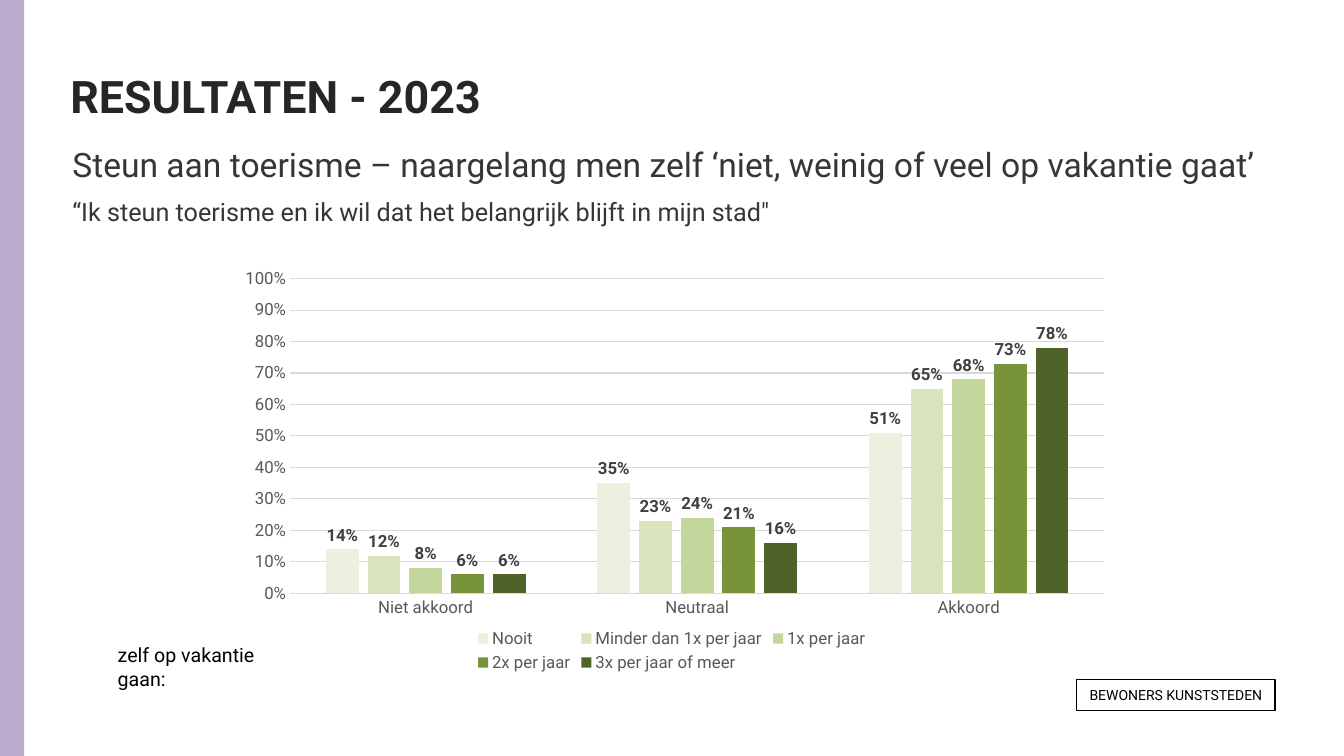
import pptx
import pptx.util
import pptx.chart.data
import pptx.dml.color
import pptx.enum.chart
import pptx.enum.shapes
import pptx.enum.text
import pptx.oxml
import pptx.oxml.ns

Pt = pptx.util.Pt
RGBColor = pptx.dml.color.RGBColor
ANCHOR = pptx.enum.text.MSO_ANCHOR

# Content
TITLE = "RESULTATEN - 2023"
SUBTITLE = [
    ("Steun aan toerisme – naargelang men zelf ‘niet, weinig of veel op vakantie gaat’", 24),
    ("“Ik steun toerisme en ik wil dat het belangrijk blijft in mijn stad\"", 18),
]
LEGEND_CAPTION = "zelf op vakantie gaan:"
BADGE = "BEWONERS KUNSTSTEDEN"
ANSWERS = ["Niet akkoord", "Neutraal", "Akkoord"]
HOLIDAY_GROUPS = [
    ("Nooit", (0.14, 0.35, 0.51), RGBColor(0xEB, 0xF1, 0xDE)),
    ("Minder dan 1x per jaar", (0.12, 0.23, 0.65), RGBColor(0xD7, 0xE4, 0xBD)),
    ("1x per jaar", (0.08, 0.24, 0.68), RGBColor(0xC3, 0xD6, 0x9B)),
    ("2x per jaar", (0.06, 0.21, 0.73), RGBColor(0x77, 0x93, 0x3C)),
    ("3x per jaar of meer", (0.06, 0.16, 0.78), RGBColor(0x4F, 0x62, 0x28)),
]
PLOT_AREA = {"x": 0.074, "y": 0.099, "w": 0.909, "h": 0.713}

# Style
FONT = "Roboto"
PERCENT = "###0%"
BLACK = RGBColor(0, 0, 0)
TITLE_INK = RGBColor(0x26, 0x26, 0x26)
SUBTITLE_INK = RGBColor(0x37, 0x36, 0x36)
LABEL_INK = RGBColor(0x40, 0x40, 0x40)
AXIS_INK = RGBColor(0x59, 0x59, 0x59)
GRID = RGBColor(0xD9, 0xD9, 0xD9)
LILAC = RGBColor(0xBC, 0xAD, 0xCE)
WHITE = RGBColor(0xFF, 0xFF, 0xFF)


def style_font(font, size, color, bold=False):
    font.name, font.size, font.bold = FONT, Pt(size), bold
    font.color.rgb = color


def add_text(slide, box, lines, color, bold=False, anchor=ANCHOR.TOP):
    frame = slide.shapes.add_textbox(*map(Pt, box)).text_frame
    frame.word_wrap = True
    frame.vertical_anchor = anchor
    frame.text = "\n".join(text for text, size in lines)
    for paragraph, (text, size) in zip(frame.paragraphs, lines):
        style_font(paragraph.runs[0].font, size, color, bold)
    return frame


def add_rectangle(slide, box):
    rectangle = slide.shapes.add_shape(
        pptx.enum.shapes.MSO_SHAPE.RECTANGLE, *map(Pt, box))
    rectangle.shadow.inherit = False
    return rectangle


def add_support_chart(slide, box):
    data = pptx.chart.data.CategoryChartData(number_format=PERCENT)
    data.categories = ANSWERS
    for name, shares, color in HOLIDAY_GROUPS:
        data.add_series(name, shares)
    chart = slide.shapes.add_chart(
        pptx.enum.chart.XL_CHART_TYPE.COLUMN_CLUSTERED, *map(Pt, box), data).chart
    chart.has_title = False
    style_font(chart.font, 10, BLACK)

    # Columns and their labels
    columns = chart.plots[0]
    columns.vary_by_categories = False
    columns.gap_width, columns.overlap = 219, -27
    for series, (name, shares, color) in zip(columns.series, HOLIDAY_GROUPS):
        series.format.fill.solid()
        series.format.fill.fore_color.rgb = color
        labels = series.data_labels
        labels.show_value = True
        labels.position = pptx.enum.chart.XL_LABEL_POSITION.OUTSIDE_END
        labels.number_format, labels.number_format_is_linked = PERCENT, False
        style_font(labels.font, 12, LABEL_INK, True)

    # Axes
    answers, shares = chart.category_axis, chart.value_axis
    for axis in (answers, shares):
        axis.major_tick_mark = axis.minor_tick_mark = pptx.enum.chart.XL_TICK_MARK.NONE
        style_font(axis.tick_labels.font, 12, AXIS_INK)
    shares.minimum_scale, shares.maximum_scale, shares.major_unit = 0, 1, 0.1
    shares.tick_labels.number_format = PERCENT
    shares.tick_labels.number_format_is_linked = False
    shares.has_major_gridlines = True
    shares.format.line.fill.background()
    for line in (answers.format.line, shares.major_gridlines.format.line):
        line.color.rgb, line.width = GRID, Pt(0.75)

    # Legend
    chart.has_legend = True
    chart.legend.position = pptx.enum.chart.XL_LEGEND_POSITION.BOTTOM
    chart.legend.include_in_layout = False
    style_font(chart.legend.font, 12, AXIS_INK)

    # Fixed plot area
    settings = [("layoutTarget", "inner"), ("xMode", "edge"), ("yMode", "edge")]
    settings += PLOT_AREA.items()
    children = "".join(f'<c:{tag} val="{value}"/>' for tag, value in settings)
    layout = pptx.oxml.parse_xml(
        f'<c:layout {pptx.oxml.ns.nsdecls("c")}>'
        f'<c:manualLayout>{children}</c:manualLayout></c:layout>')
    plot_area = chart.plots[0]._element.getparent()
    for old_layout in plot_area.findall(pptx.oxml.ns.qn("c:layout")):
        plot_area.remove(old_layout)
    plot_area.insert(0, layout)


def main():
    deck = pptx.Presentation()
    deck.slide_width, deck.slide_height = Pt(960), Pt(540)
    slide = deck.slides.add_slide(deck.slide_layouts[6])
    slide.background.fill.solid()
    slide.background.fill.fore_color.rgb = WHITE

    # Side band
    band = add_rectangle(slide, (0, 0, 17.3, 540))
    band.fill.solid()
    band.fill.fore_color.rgb = LILAC
    band.line.fill.background()

    # Headings
    add_text(slide, (43.2, 23, 684, 90), [(TITLE, 32)], TITLE_INK, True, ANCHOR.MIDDLE)
    subtitle = add_text(slide, (44.6, 99, 900.7, 95), SUBTITLE, SUBTITLE_INK)
    for paragraph in subtitle.paragraphs:
        paragraph.space_after = Pt(8)
    subtitle.paragraphs[1].space_before = Pt(1)

    # Chart and the caption beside its legend
    add_support_chart(slide, (159.8, 167.8, 640, 315.4))
    add_text(slide, (77, 455.8, 145.4, 40), [(LEGEND_CAPTION, 14)], BLACK)

    # Badge
    badge = add_rectangle(slide, (769, 485.3, 141.8, 22.3))
    badge.fill.background()
    badge.line.color.rgb, badge.line.width = BLACK, Pt(1)
    badge.text_frame.text = BADGE
    badge.text_frame.word_wrap = False
    badge.text_frame.vertical_anchor = ANCHOR.MIDDLE
    label = badge.text_frame.paragraphs[0]
    label.alignment = pptx.enum.text.PP_ALIGN.CENTER
    style_font(label.runs[0].font, 10, BLACK)

    deck.save("out.pptx")


if __name__ == "__main__":
    main()
